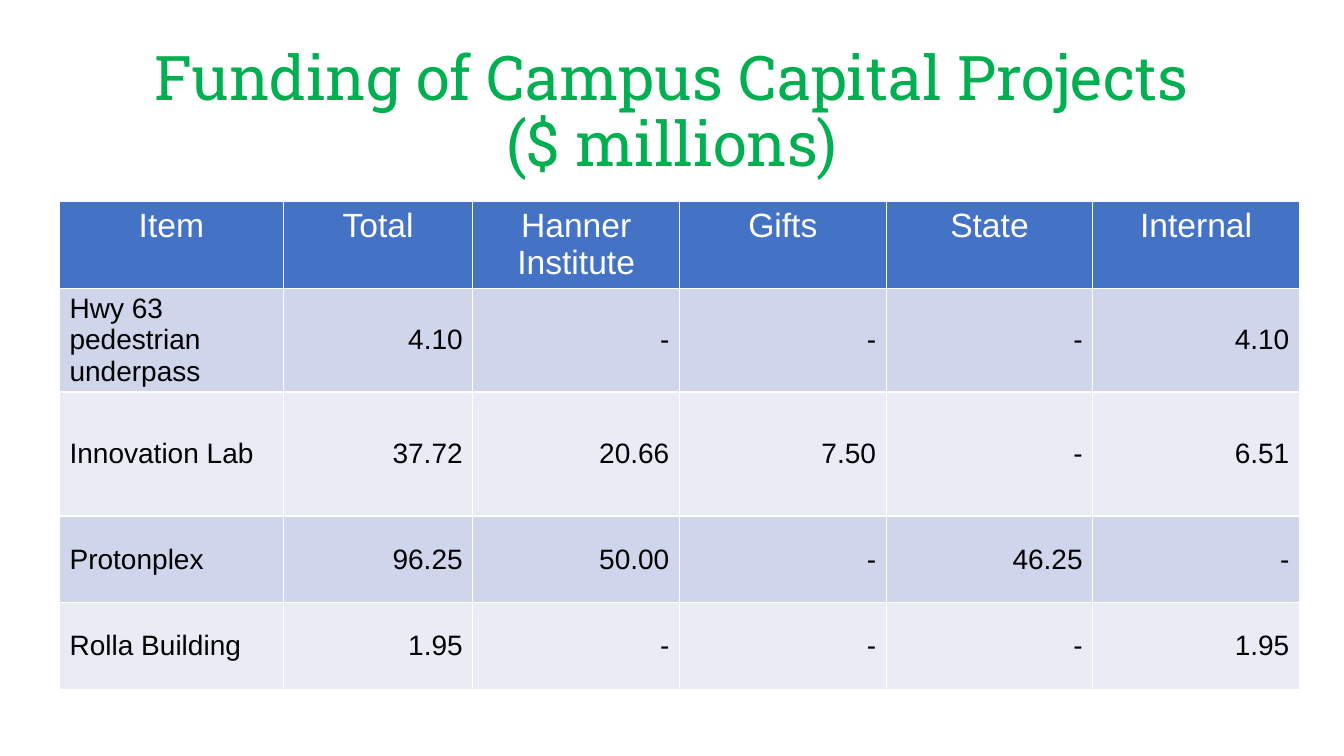
from dataclasses import dataclass

import pptx
import pptx.dml.color
import pptx.enum.text
import pptx.text.text
import pptx.util

Inches = pptx.util.Inches
ALIGN = pptx.enum.text.PP_ALIGN
ANCHOR = pptx.enum.text.MSO_ANCHOR

COLORS = {
    "title": "00B050",
    "header": "4472C4",
    "header_text": "FFFFFF",
    "odd_row": "CFD5EA",
    "even_row": "E9EBF5",
    "text": "000000",
}


@dataclass
class Column:
    heading: str
    width: float


@dataclass
class Project:
    name: str
    amounts: tuple[str, ...]
    height: float


COLUMNS = [
    Column("Item", 2.22),
    Column("Total", 1.88),
    Column("Hanner Institute", 2.05),
    Column("Gifts", 2.05),
    Column("State", 2.05),
    Column("Internal", 2.05),
]
PROJECTS = [
    Project("Hwy 63 pedestrian underpass", ("4.10", "-", "-", "-", "4.10"), 0.77),
    Project("Innovation Lab", ("37.72", "20.66", "7.50", "-", "6.51"), 1.23),
    Project("Protonplex", ("96.25", "50.00", "-", "46.25", "-"), 0.86),
    Project("Rolla Building", ("1.95", "-", "-", "-", "1.95"), 0.86),
]
HEADER_HEIGHT = 0.86


def rgb(name: str) -> pptx.dml.color.RGBColor:
    return pptx.dml.color.RGBColor.from_string(COLORS[name])


def write_text(tf: pptx.text.text.TextFrame, text: str, *, size: float, color: str,
               font: str = "Arial", align: ALIGN = ALIGN.LEFT,
               line_spacing: float | None = None) -> None:
    """Fill the first paragraph; a newline in the text becomes a line break."""
    p = tf.paragraphs[0]
    p.text = text
    p.alignment = align
    p.line_spacing = line_spacing
    for r in p.runs:
        r.font.name = font
        r.font.size = pptx.util.Pt(size)
        r.font.bold = False
        r.font.color.rgb = rgb(color)


def add_title(s: pptx.slide.Slide) -> None:
    sp = s.shapes.title
    sp.left, sp.top = Inches(0.92), Inches(0.4)
    sp.width, sp.height = Inches(11.5), Inches(1.45)
    tf = sp.text_frame
    tf.word_wrap = True
    tf.auto_size = pptx.enum.text.MSO_AUTO_SIZE.NONE
    tf.vertical_anchor = ANCHOR.MIDDLE
    write_text(tf, "Funding of Campus Capital Projects\n($ millions)", size=44,
               color="title", font="Roboto Slab", align=ALIGN.CENTER, line_spacing=0.9)


def add_funding_table(s: pptx.slide.Slide) -> None:
    frame = s.shapes.add_table(len(PROJECTS) + 1, len(COLUMNS), Inches(0.59), Inches(2),
                               Inches(12.31), Inches(4.96))
    table = frame.table
    table.rows[0].height = Inches(HEADER_HEIGHT)
    for i, column in enumerate(COLUMNS):
        table.columns[i].width = Inches(column.width)
        cell = table.cell(0, i)
        cell.fill.solid()
        cell.fill.fore_color.rgb = rgb("header")
        write_text(cell.text_frame, column.heading, size=24, color="header_text",
                   align=ALIGN.CENTER)

    for row, project in enumerate(PROJECTS, start=1):
        table.rows[row].height = Inches(project.height)
        for i, text in enumerate((project.name, *project.amounts)):
            cell = table.cell(row, i)
            cell.fill.solid()
            cell.fill.fore_color.rgb = rgb("odd_row" if row % 2 else "even_row")
            cell.vertical_anchor = ANCHOR.MIDDLE
            write_text(cell.text_frame, text, size=20, color="text",
                       align=ALIGN.RIGHT if i else ALIGN.LEFT)


def main() -> None:
    prs = pptx.Presentation()
    prs.slide_width, prs.slide_height = Inches(13.33), Inches(7.5)
    s = prs.slides.add_slide(prs.slide_layouts.get_by_name("Title Only"))
    add_title(s)
    add_funding_table(s)
    prs.save("out.pptx")


if __name__ == "__main__":
    main()
